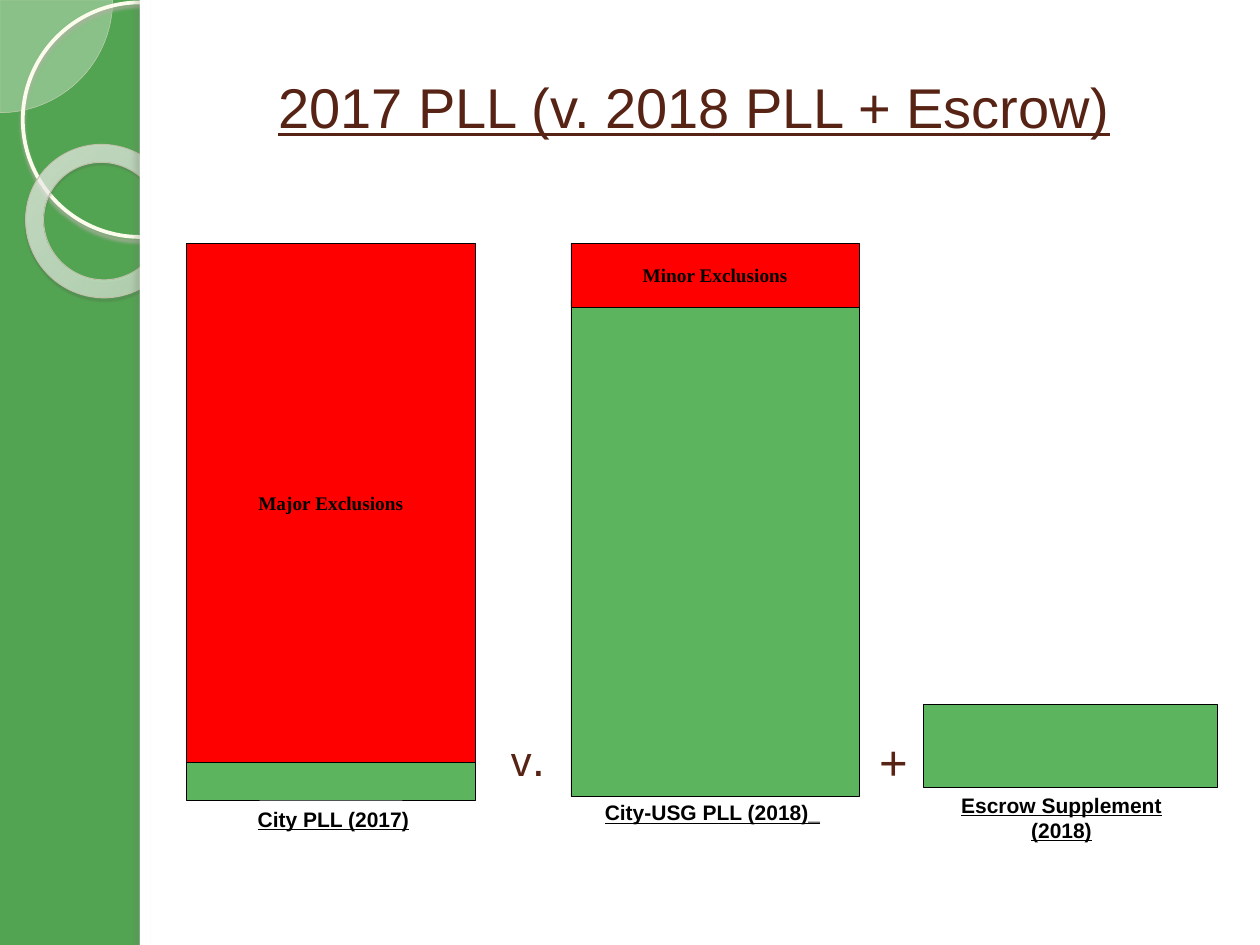
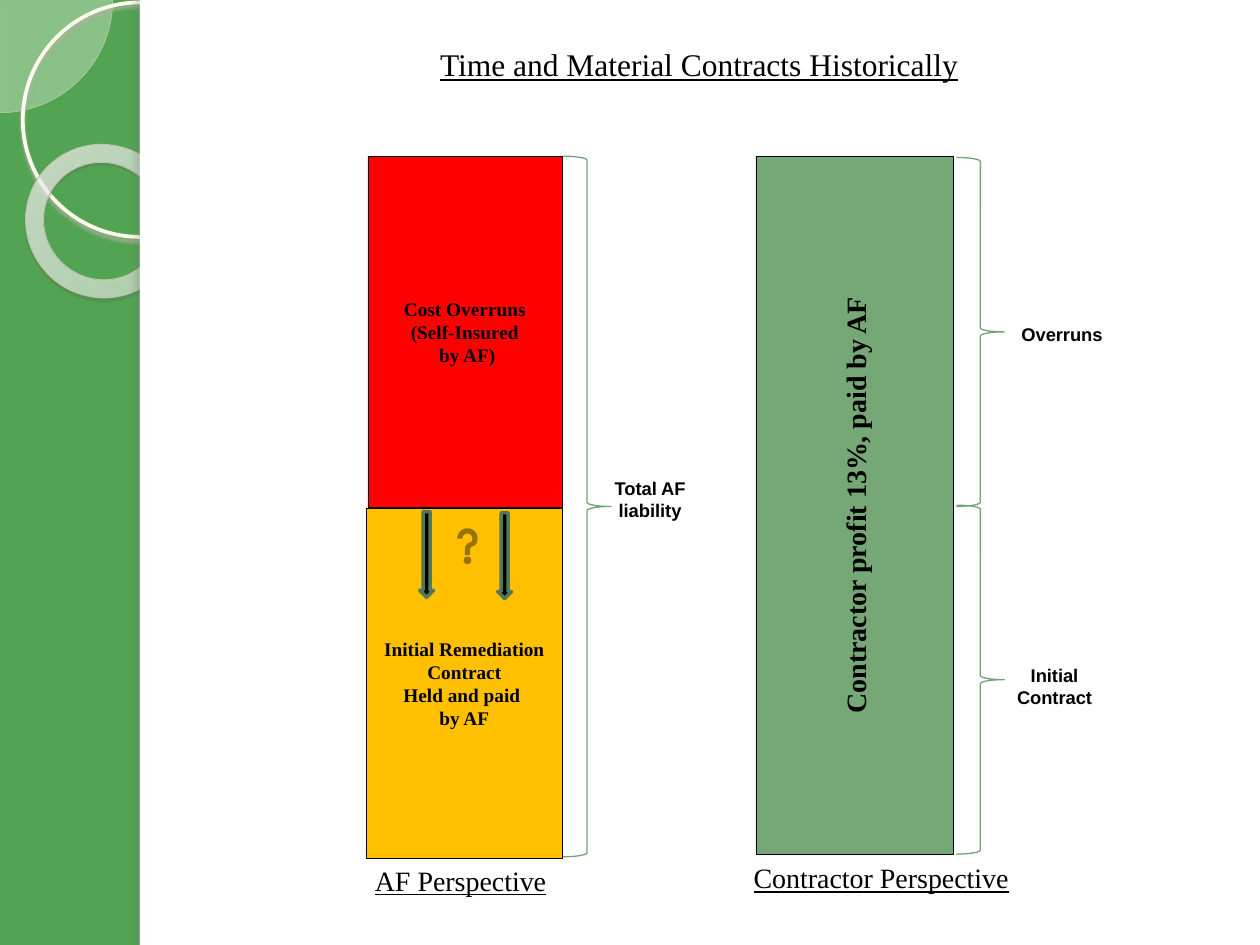
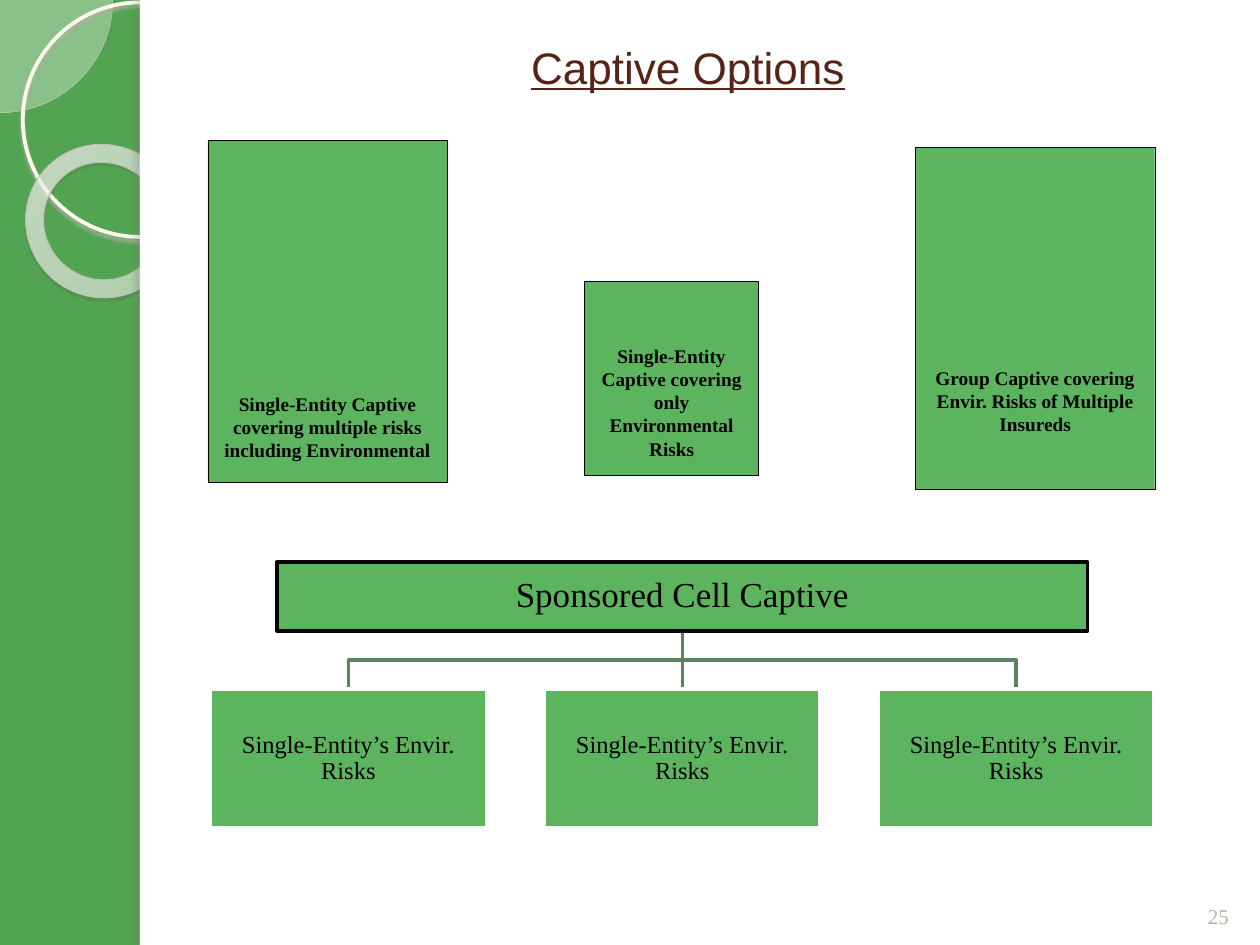
from lxml.etree import SubElement
from pptx import Presentation
from pptx.dml.color import RGBColor
from pptx.enum.shapes import MSO_CONNECTOR, MSO_SHAPE
from pptx.enum.text import MSO_ANCHOR, PP_ALIGN
from pptx.oxml import parse_xml
from pptx.oxml.ns import nsdecls, qn
from pptx.util import Pt

COLORS = {
    "band": "52A452",
    "white": "FFFFFF",
    "black": "000000",
    "title": "572314",
    "covered": "5CB45E",
    "excluded": "FF0000",
    "remediation": "FFC000",
    "profit": "76A776",
    "brace": "72A376",
    "arrow": "547957",
    "tree": "5B835E",
    "number": "B1B39F",
    "pie": "FCFDF8",
    "pie_edge": "CDCFB9",
    "ring": "FBFCEB",
    "ring_shadow": "AFB0A2",
    "donut_edge": "C1C2AC",
    "donut_shadow": "58594F",
    "panel_shadow": "75756E",
}
DONUT_STOPS = [(0, "FDFDF9", 70), (70, "FFFFFC", 55), (100, "DCDFB4", 60)]
SANS = "Arial"
SERIF = "Times New Roman"


def rgb(name):
    return RGBColor.from_string(COLORS[name])


def points(values):
    return [Pt(value) for value in values]


def style_line(shape, color, width):
    if color is None:
        shape.line.fill.background()
    else:
        shape.line.color.rgb = rgb(color)
        shape.line.width = Pt(width)


def add_shape(page, kind, place, fill=None, line=None, width=0.25):
    shape = page.shapes.add_shape(kind, *points(place))
    shape.shadow.inherit = False
    if fill:
        shape.fill.solid()
        shape.fill.fore_color.rgb = rgb(fill)
    else:
        shape.fill.background()
    style_line(shape, line, width)
    return shape


def format_span(span, font, size, color="black", bold=False, underline=False):
    span.font.name = font
    span.font.size = Pt(size)
    span.font.color.rgb = rgb(color)
    span.font.bold = bold
    span.font.underline = underline


def write(shape, text, font, size, anchor=MSO_ANCHOR.MIDDLE, **style):
    frame = shape.text_frame
    frame.word_wrap = True
    frame.vertical_anchor = anchor
    frame.text = text
    for para in frame.paragraphs:
        para.alignment = PP_ALIGN.CENTER
        for span in para.runs:
            format_span(span, font, size, **style)
    return frame


def add_text(page, place, text, font, size, **style):
    box = page.shapes.add_textbox(*points(place))
    return write(box, text, font, size, **style)


def add_block(page, place, fill, text="", size=11, anchor=MSO_ANCHOR.MIDDLE):
    block = add_shape(page, MSO_SHAPE.RECTANGLE, place, fill, "black")
    if text:
        write(block, text, SERIF, size, anchor, bold=True)
    return block


def add_label(page, place, text, size, underline=False):
    add_text(page, place, text, SANS, size, anchor=MSO_ANCHOR.TOP,
             bold=True, underline=underline)


def add_title(page, place, text, size, font=SANS, color="title", anchor=MSO_ANCHOR.MIDDLE):
    add_text(page, place, text, font, size, color=color, anchor=anchor, underline=True)


def add_shadow(shape, color, alpha, blur, distance, angle):
    effects = shape.element.spPr.find(qn("a:effectLst"))
    effects.append(parse_xml(
        f'<a:outerShdw {nsdecls("a")} blurRad="{Pt(blur)}" dist="{Pt(distance)}" '
        f'dir="{angle * 60000}" algn="tl" rotWithShape="0">'
        f'<a:srgbClr val="{COLORS[color]}"><a:alpha val="{alpha * 1000}"/></a:srgbClr>'
        '</a:outerShdw>'))


def fill_donut(donut):
    stops = "".join(
        f'<a:gs pos="{position * 1000}"><a:srgbClr val="{color}">'
        f'<a:alpha val="{alpha * 1000}"/></a:srgbClr></a:gs>'
        for position, color, alpha in DONUT_STOPS)
    gradient = parse_xml(
        f'<a:gradFill {nsdecls("a")} rotWithShape="1"><a:gsLst>{stops}</a:gsLst>'
        '<a:path path="circle"><a:fillToRect l="-408000" t="-50000" r="508000" b="150000"/>'
        '</a:path></a:gradFill>')
    properties = donut.element.spPr
    properties.replace(properties.find(qn("a:noFill")), gradient)


def add_page(deck):
    page = deck.slides.add_slide(deck.slide_layouts[6])
    page.background.fill.solid()
    page.background.fill.fore_color.rgb = rgb("band")

    pie = add_shape(page, MSO_SHAPE.PIE, (-64.4, -64.4, 128.8, 128.8), "pie", "pie_edge")
    pie.adjustments[0] = 0
    pie.adjustments[1] = 54
    tint = pie.element.spPr.find(qn("a:solidFill")).find(qn("a:srgbClr"))
    SubElement(tint, qn("a:alpha")).set("val", "33000")

    ring = add_shape(page, MSO_SHAPE.OVAL, (13, 1.4, 134, 134), None, "ring", 2.15)
    add_shadow(ring, "ring_shadow", 85, 2, 2, 90)

    donut = add_shape(page, MSO_SHAPE.DONUT, (14.4, 82.8, 88.6, 87.1), None, "donut_edge", 0.58)
    donut.adjustments[0] = 0.118
    donut.rotation = 38.6
    fill_donut(donut)
    add_shadow(donut, "donut_shadow", 35, 1, 1.2, 75)

    add_shape(page, MSO_SHAPE.RECTANGLE, (80, 0, 640, 540), "white")
    edge = add_shape(page, MSO_SHAPE.RECTANGLE, (80, 0, 5.8, 540), "white")
    add_shadow(edge, "panel_shadow", 25, 3, 3, 180)
    return page


def build_policy_comparison(deck):
    page = add_page(deck)
    add_title(page, (73.4, 15.8, 646.6, 90), "2017 PLL (v. 2018 PLL + Escrow)", 32)
    city, joint, top, width = 106.6, 326.2, 139, 164.9
    add_block(page, (joint, 171.4, width, 283.7), "covered")
    add_block(page, (527.8, 402.5, 167.8, 47.2), "covered")
    add_block(page, (city, top, width, 297), "excluded", "Major Exclusions")
    add_block(page, (city, 435.6, width, 21.6), "covered")
    add_block(page, (joint, top, width, 36.4), "excluded", "Minor Exclusions")
    for left, label_top, text in [
        (106.6, 457.2, "City PLL (2017)"),
        (323.3, 453.6, "City-USG PLL (2018)_"),
        (522.7, 449.3, "Escrow Supplement\n(2018)"),
    ]:
        add_label(page, (left, label_top, 167.8, 21.8), text, 12, underline=True)
    versus = add_text(page, (284.4, 412.6, 34.6, 40.3), "v", SANS, 23.8, color="title")
    stop = versus.paragraphs[0].add_run()
    stop.text = "."
    format_span(stop, SANS, 27.2, "title")
    add_text(page, (493.2, 414.7, 34.6, 40.3), "+", SANS, 28, color="title")


def build_contract_history(deck):
    page = add_page(deck)
    add_title(page, (79.2, 0.7, 640.8, 71.3), "Time and Material Contracts Historically",
              18, SERIF, "black")
    profit = add_block(page, (432, 89.3, 113, 398.9), "profit",
                       "Contractor profit 13%, paid by AF", 16)
    profit.element.txBody.bodyPr.set("vert", "vert270")
    add_block(page, (209.5, 290.2, 111.6, 200.2), "remediation",
              "Initial Remediation Contract\nHeld and paid \nby AF")
    add_block(page, (210.2, 89.3, 110.9, 200.5), "excluded",
              "Cost Overruns\n(Self-Insured\n by AF)")

    for left, top, height in [(321.8, 89.3, 400.3), (546.5, 90, 199.4), (546.5, 288.7, 199.4)]:
        add_shape(page, MSO_SHAPE.RIGHT_BRACE, (left, top, 27.4, height), None, "brace", 0.75)
    for left, top, text in [
        (338.4, 269.3, "Total AF liability"),
        (573.8, 181.4, "Overruns"),
        (569.5, 375.8, "Initial Contract"),
    ]:
        add_label(page, (left, top, 66.2, 32.4), text, 10.5)

    for left, top in [(239.8, 292.3), (284.4, 293)]:
        add_shape(page, MSO_SHAPE.DOWN_ARROW, (left, top, 7.9, 49), "black", "arrow", 2)
    add_shape(page, MSO_SHAPE.ACTION_BUTTON_HELP, (253.4, 298.1, 27.4, 28.1), "remediation")

    owner = add_text(page, (154.1, 487.4, 264.2, 31), "AF Perspective", SERIF, 16, underline=True)
    owner.margin_right = Pt(53)
    add_text(page, (421.9, 486, 163.4, 31), "Contractor Perspective", SERIF, 16, underline=True)


def add_tree_box(page, place, text, size, line):
    box = add_shape(page, MSO_SHAPE.RECTANGLE, place, "covered", line, 2)
    frame = write(box, text, SERIF, size)
    frame.margin_left = frame.margin_right = Pt(0.7)
    frame.margin_top = frame.margin_bottom = Pt(0.7)
    frame.paragraphs[0].line_spacing = 0.9
    return box


def add_branch(page, center, parent_bottom, target, child_top):
    middle = (parent_bottom + child_top) / 2
    builder = page.shapes.build_freeform(Pt(center), Pt(parent_bottom))
    builder.add_line_segments(
        [points(spot) for spot in [(center, middle), (target, middle), (target, child_top)]],
        close=False)
    branch = builder.convert_to_shape()
    branch.shadow.inherit = False
    branch.fill.background()
    style_line(branch, "tree", 2)


def add_cell_tree(page):
    center, parent_top, parent_width, parent_height = 389.9, 321.1, 463, 39.6
    cell_top, cell_width, cell_height, pitch = 393.8, 157.7, 79.2, 190.8
    parent_bottom = parent_top + parent_height
    for target in (center - pitch, center + pitch):
        add_branch(page, center, parent_bottom, target, cell_top)
    stem = page.shapes.add_connector(
        MSO_CONNECTOR.STRAIGHT, *points((center, parent_bottom, center, cell_top)))
    style_line(stem, "tree", 2)
    SubElement(stem.element.spPr, qn("a:effectLst"))

    parent = add_tree_box(
        page, (center - parent_width / 2, parent_top, parent_width, parent_height),
        "Sponsored Cell Captive", 20, "black")
    cells = [
        add_tree_box(
            page, (center + step * pitch - cell_width / 2, cell_top, cell_width, cell_height),
            "Single-Entity’s Envir. Risks", 14, "white")
        for step in (-1, 0, 1)
    ]
    stem.begin_connect(parent, 2)
    stem.end_connect(cells[1], 0)


def build_captive_options(deck):
    page = add_page(deck)
    add_title(page, (72, 19.4, 642.2, 23.8), "Captive Options", 25.2, anchor=MSO_ANCHOR.TOP)
    add_text(page, (678.2, 496.8, 36, 37.4), "25", SERIF, 12, color="number",
             anchor=MSO_ANCHOR.BOTTOM)
    for place, bottom_gap, text in [
        ((118.8, 80.3, 136.8, 195.5), 12,
         "Single-Entity Captive covering multiple risks including Environmental"),
        ((334.1, 160.6, 99.4, 111.2), 9,
         "Single-Entity Captive covering only Environmental Risks"),
        ((523.1, 84.2, 136.8, 195.5), 31,
         "Group Captive covering Envir. Risks of Multiple Insureds"),
    ]:
        block = add_block(page, place, "covered", text, anchor=MSO_ANCHOR.BOTTOM)
        block.text_frame.margin_bottom = Pt(bottom_gap)
    add_cell_tree(page)


def main():
    deck = Presentation()
    deck.slide_width = Pt(720)
    deck.slide_height = Pt(540)
    build_policy_comparison(deck)
    build_contract_history(deck)
    build_captive_options(deck)
    deck.save("out.pptx")


if __name__ == "__main__":
    main()
